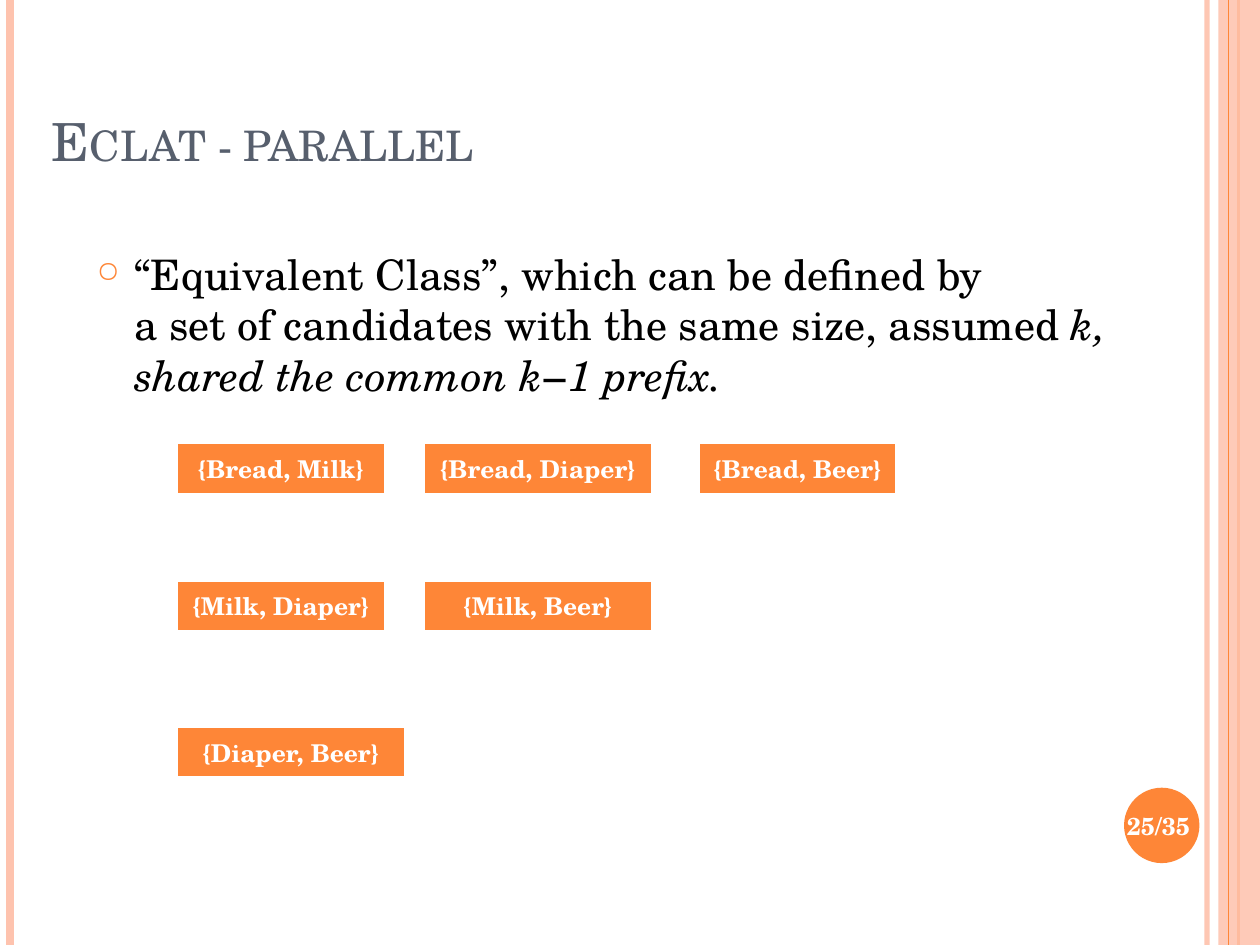
from lxml.etree import SubElement
from pptx import Presentation
from pptx.dml.color import RGBColor as RGB
from pptx.enum.shapes import MSO_CONNECTOR as Connector, MSO_SHAPE as Preset
from pptx.enum.text import MSO_ANCHOR as Anchor, PP_ALIGN as Align
from pptx.oxml.ns import qn
from pptx.util import Cm, Pt

COLORS = {"accent": "FE8637", "pale": "FEC3AE", "title": "575F6D",
          "body": "000000", "white": "FFFFFF"}
FONT = "TeX Gyre Schola"
WIDTH, HEIGHT = 25.4, 19.05


class SlideBuilder:
    """Holds the deck style and the current slide."""

    def __init__(self, deck):
        self.slide = deck.slides.add_slide(deck.slide_layouts[5])
        self.shapes = self.slide.shapes

    def style(self, paragraph, size, color, bold=False, align=Align.LEFT):
        paragraph.alignment = align
        font = paragraph.font
        font.name, font.size, font.bold = FONT, Pt(size), bold
        font.color.rgb = RGB.from_string(COLORS[color])

    def paint(self, fill, color, opacity=100):
        fill.solid()
        fill.fore_color.rgb = RGB.from_string(COLORS[color])
        if opacity < 100:
            tint = fill._xPr.find(qn("a:solidFill"))[0]
            SubElement(tint, qn("a:alpha"), val=str(opacity * 1000))

    def title(self, text, left, top, width, height):
        heading = self.shapes.title
        heading.left, heading.top = Cm(left), Cm(top)
        heading.width, heading.height = Cm(width), Cm(height)
        frame = heading.text_frame
        frame.text = text
        frame.vertical_anchor = Anchor.BOTTOM
        paragraph = frame.paragraphs[0]
        self.style(paragraph, 30, "title")
        paragraph.runs[0]._r.get_or_add_rPr().set("cap", "small")

    def rule(self, x, color, width, opacity=100):
        line = self.shapes.add_connector(Connector.STRAIGHT, Cm(x), 0, Cm(x), Cm(HEIGHT))
        line.line.width = Pt(width)
        self.paint(line.line.fill, color, opacity)
        SubElement(line._element.spPr, qn("a:effectLst"))

    def shape(self, preset, color, left, top, width, height, opacity=100):
        shape = self.shapes.add_shape(preset, Cm(left), Cm(top), Cm(width), Cm(height))
        shape.shadow.inherit = False
        shape.line.fill.background()
        self.paint(shape.fill, color, opacity)

    def text_box(self, left, top, width, height, anchor=Anchor.TOP):
        frame = self.shapes.add_textbox(Cm(left), Cm(top), Cm(width), Cm(height)).text_frame
        frame.word_wrap = True
        frame.vertical_anchor = anchor
        return frame.paragraphs[0]

    def page_number(self, text, *box):
        paragraph = self.text_box(*box, anchor=Anchor.MIDDLE)
        paragraph.text = text
        self.style(paragraph, 14, "white", True, Align.CENTER)

    def bullet(self, lines, *box):
        paragraph = self.text_box(*box)
        self.style(paragraph, 24, "body")
        paragraph.space_before = Pt(6)
        for number, line in enumerate(lines):
            if number:
                paragraph.add_line_break()
            for text, italic in line:
                run = paragraph.add_run()
                run.text, run.font.italic = text, italic
        props = paragraph._p.get_or_add_pPr()
        props.set("marL", str(Cm(0.76)))
        props.set("indent", str(Cm(-0.76)))
        defaults = props.find(qn("a:defRPr"))
        tint = SubElement(props, qn("a:buClr"))
        SubElement(tint, qn("a:srgbClr"), val=COLORS["accent"])
        SubElement(props, qn("a:buSzPct"), val="70000")
        SubElement(props, qn("a:buChar"), char="○")
        props.append(defaults)

    def itemset(self, text, left, top, width, height=1.04):
        table = self.shapes.add_table(1, 1, Cm(left), Cm(top), Cm(width), Cm(height)).table
        cell = table.cell(0, 0)
        cell.text = text
        self.style(cell.text_frame.paragraphs[0], 14, "white", True, Align.CENTER)
        props = cell._tc.get_or_add_tcPr()
        for side, width_pt in (("L", 1), ("R", 1), ("T", 1), ("B", 3)):
            border = SubElement(props, qn(f"a:ln{side}"), w=str(Pt(width_pt)))
            tint = SubElement(border, qn("a:solidFill"))
            SubElement(tint, qn("a:srgbClr"), val=COLORS["white"])
        self.paint(cell.fill, "accent")


def main():
    deck = Presentation()
    deck.slide_width, deck.slide_height = Cm(WIDTH), Cm(HEIGHT)
    page = SlideBuilder(deck)

    page.rule(24.33, "pale", 3, 93)
    page.rule(0.2, "pale", 4.5)
    page.rule(24.97, "accent", 1.5)
    page.shape(Preset.RECTANGLE, "pale", 24.56, 0, WIDTH - 24.56, HEIGHT, 87)
    page.rule(24.77, "accent", 0.75)
    page.shape(Preset.OVAL, "accent", 22.66, 15.88, 1.52, 1.52)

    page.title("Eclat - parallel", 0.79, 0.41, 20.75, 3.18)
    page.page_number("25/35", 22.43, 15.93, 1.85, 1.45)
    page.bullet([
        [("“Equivalent Class”, which can be defined by ", False)],
        [("a set of candidates with the same size, assumed ", False), ("k, ", True)],
        [("shared the common k−1 prefix.", True)],
    ], 1.7, 4.88, 21.95, 13.54)

    lefts = (3.58, 8.56, 14.1)
    classes = (
        (8.94, (("{Bread, Milk}", 4.17), ("{Bread, Diaper}", 4.57), ("{Bread, Beer}", 3.96))),
        (11.71, (("{Milk, Diaper}", 4.17), ("{Milk, Beer}", 4.57))),
        (14.66, (("{Diaper, Beer}", 4.57),)),
    )
    for top, itemsets in classes:
        for left, (items, width) in zip(lefts, itemsets):
            page.itemset(items, left, top, width)

    deck.save("out.pptx")


if __name__ == "__main__":
    main()
